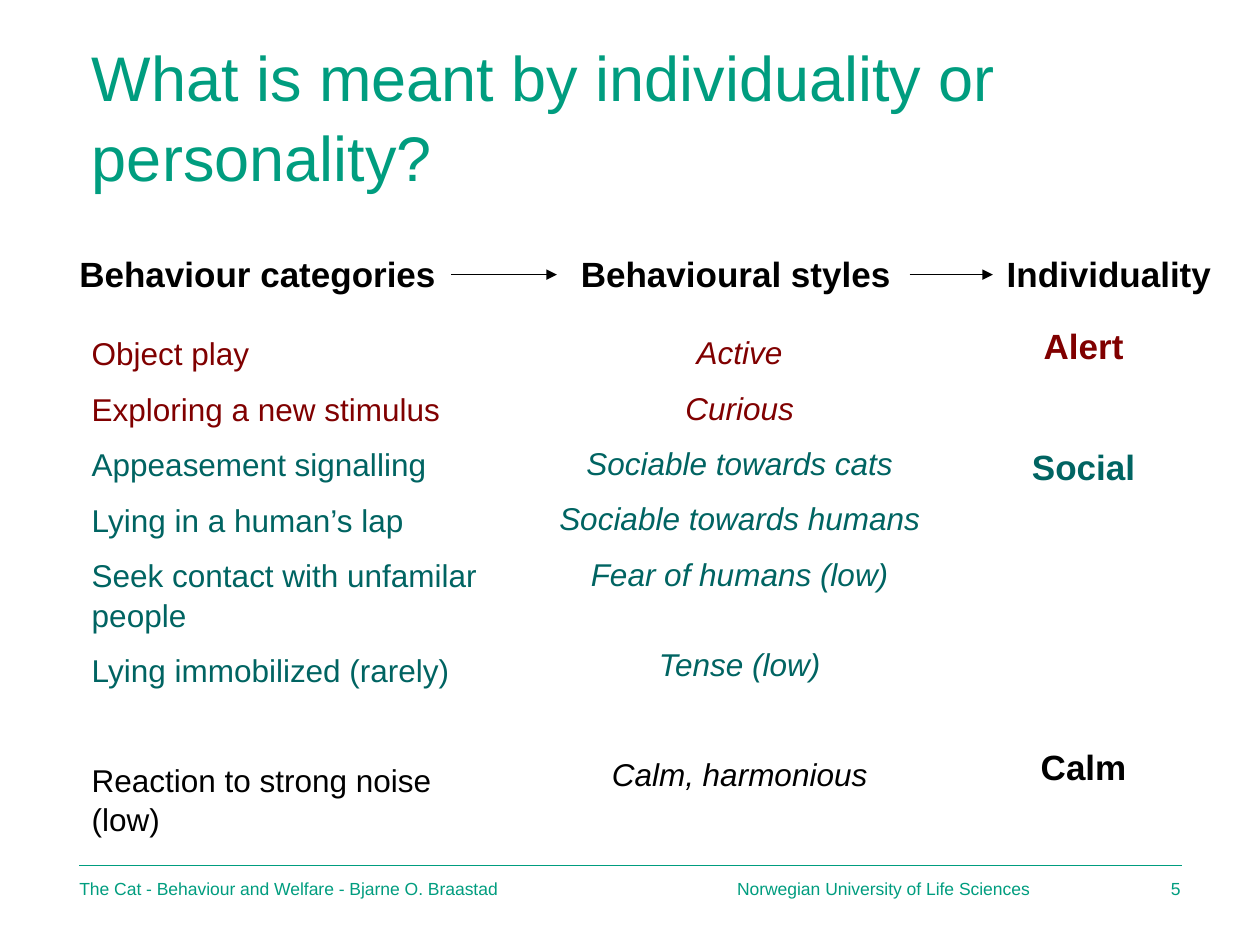
import lxml.etree
import pptx
import pptx.dml.color
import pptx.enum.shapes
import pptx.enum.text
import pptx.oxml.ns
import pptx.util

PX = 9144
HUES = {"green": "009D7F", "red": "800000", "teal": "006462", "black": "000000"}
ALIGN = pptx.enum.text.PP_ALIGN
ANCHOR = pptx.enum.text.MSO_ANCHOR
LEFT_ROWS = [
    ("Object play", "red", 0), ("Exploring a new stimulus", "red", 9),
    ("Appeasement signalling", "teal", 9), ("Lying in a human’s lap", "teal", 9),
    ("Seek contact with unfamilar people", "teal", 9),
    ("Lying immobilized (rarely)", "teal", 9),
    ("Reaction to strong noise (low)", "black", 39.7),
]
STYLE_ROWS = [
    ("Active", "red", 0), ("Curious", "red", 9),
    ("Sociable towards cats", "teal", 9), ("Sociable towards humans", "teal", 9),
    ("Fear of humans (low)", "teal", 9), ("Tense (low)", "teal", 29),
    ("Calm, harmonious", "black", 39.7),
]
TRAIT_ROWS = [("Alert", "red", 0), ("Social", "teal", 44), ("Calm", "black", 146)]


def add_node(owner, tag, **attrs):
    """Append a drawing element with the given attributes."""
    return lxml.etree.SubElement(owner, pptx.oxml.ns.qn(tag), **attrs)


def place(shape, box):
    """Move and size a shape to a box in px."""
    shape.left, shape.top, shape.width, shape.height = [n * PX for n in box]


def write(para, text, size=18, hue="green", bold=False, slant=False,
          align=ALIGN.LEFT, before=0, pitch=1.05):
    """Fill a paragraph with one formatted run."""
    para.alignment = align
    para.line_spacing = pitch
    if before:
        para.space_before = pptx.util.Pt(before)
    run = para.add_run()
    run.text = text
    font = run.font
    font.name, font.size = "Arial", pptx.util.Pt(size)
    font.bold, font.italic = bold, slant
    font.color.rgb = pptx.dml.color.RGBColor.from_string(HUES[hue])


def add_frame(slide, box, side=10, edge=5, anchor=ANCHOR.TOP):
    """Add a wrapping text box and return its frame."""
    frame = slide.shapes.add_textbox(*[n * PX for n in box]).text_frame
    frame.word_wrap = True
    frame.vertical_anchor = anchor
    frame.margin_left = frame.margin_right = side * PX
    frame.margin_top = frame.margin_bottom = edge * PX
    return frame


def add_line(slide, start, end, hue, width, arrow=False):
    """Draw a straight line, with an arrowhead at its end if asked."""
    line = slide.shapes.add_connector(
        pptx.enum.shapes.MSO_CONNECTOR.STRAIGHT, *[n * PX for n in start + end])
    line.line.color.rgb = pptx.dml.color.RGBColor.from_string(HUES[hue])
    line.line.width = pptx.util.Pt(width)
    if arrow:
        add_node(line.line._get_or_add_ln(), "a:tailEnd", type="triangle")
    add_node(line._element.spPr, "a:effectLst")


def add_title(slide, box):
    """Place and fill the title."""
    title = slide.shapes.title
    place(title, box)
    frame = title.text_frame
    frame.auto_size = pptx.enum.text.MSO_AUTO_SIZE.NONE
    frame.word_wrap = True
    frame.vertical_anchor = ANCHOR.BOTTOM
    write(frame.paragraphs[0], "What is meant by individuality or personality?", size=36)


def add_heads(slide, box):
    """Set the three column heads on tab stops, joined by arrows."""
    left, top = box[:2]
    para = add_frame(slide, box, side=0).paragraphs[0]
    tabs = add_node(para._p.get_or_add_pPr(), "a:tabLst")
    for stop in (398, 736):
        add_node(tabs, "a:tab", pos=str(stop * PX), algn="l")
    write(para, "Behaviour categories\tBehavioural styles\tIndividuality",
          size=20, hue="black", bold=True)
    for start, end in ((295, 379), (659, 725)):
        add_line(slide, (left + start, top + 24), (left + end, top + 24),
                 "black", 0.75, arrow=True)


def add_column(slide, box, rows, **style):
    """Stack rows of text, each with its colour and space before."""
    frame = add_frame(slide, box)
    for spot, (text, hue, before) in enumerate(rows):
        para = frame.add_paragraph() if spot else frame.paragraphs[0]
        write(para, text, hue=hue, before=before, **style)


def add_footer(slide, box):
    """Draw the rule and the three footer texts."""
    left, top, width, height = box
    add_line(slide, (left, top), (left + width, top), "green", 1)
    for start, span, text, align in (
            (0, 520, "The Cat - Behaviour and Welfare - Bjarne O. Braastad", ALIGN.LEFT),
            (522, 316, "Norwegian University of Life Sciences", ALIGN.LEFT),
            (841, 33, "5", ALIGN.RIGHT)):
        frame = add_frame(slide, (left + start, top + 10, span, height - 10),
                          side=0, edge=0, anchor=ANCHOR.MIDDLE)
        write(frame.paragraphs[0], text, size=10, align=align, pitch=1)


def main():
    """Build and save the slide."""
    deck = pptx.Presentation()
    deck.slide_width, deck.slide_height = 1000 * PX, 750 * PX
    slide = deck.slides.add_slide(deck.slide_layouts.get_by_name("Title Only"))
    add_title(slide, (63, 23, 901, 136))
    add_heads(slide, (63, 194, 910, 50))
    add_column(slide, (63, 259, 347, 419), LEFT_ROWS)
    add_column(slide, (416, 258, 342, 434), STYLE_ROWS, slant=True, align=ALIGN.CENTER)
    add_column(slide, (764, 251, 192, 393), TRAIT_ROWS, size=20, bold=True,
               align=ALIGN.CENTER)
    add_footer(slide, (63, 687, 875, 27))
    deck.save("out.pptx")


if __name__ == "__main__":
    main()
